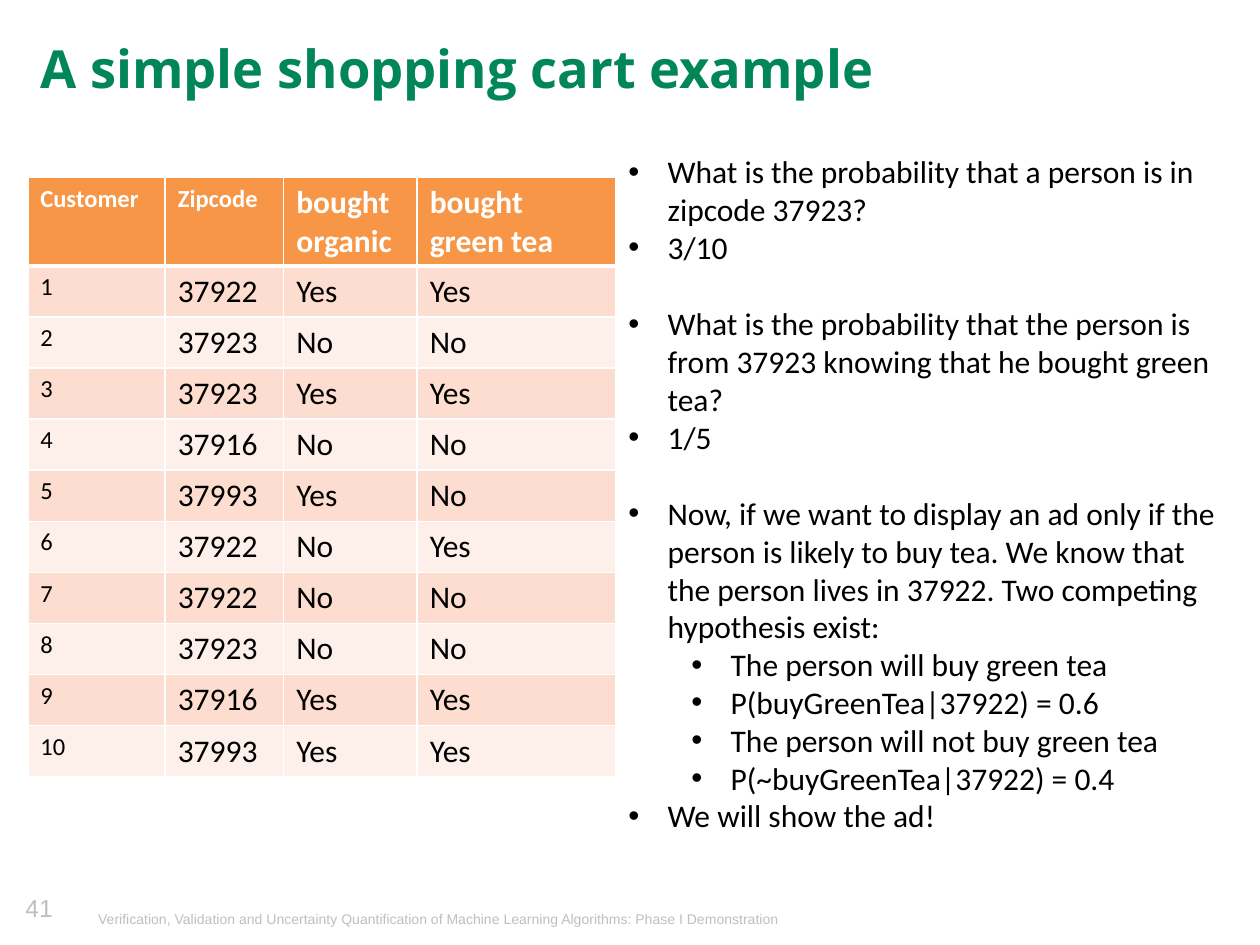
import pptx
import pptx.dml.color
import pptx.enum.text
import pptx.oxml.ns
import pptx.util
from lxml import etree

Cm = pptx.util.Cm
Pt = pptx.util.Pt
RGBColor = pptx.dml.color.RGBColor
Align = pptx.enum.text.PP_ALIGN
Anchor = pptx.enum.text.MSO_ANCHOR
qn = pptx.oxml.ns.qn

GREEN = RGBColor(0x00, 0x86, 0x57)
ORANGE = RGBColor(0xF7, 0x96, 0x46)
PEACH = RGBColor(0xFC, 0xDD, 0xCF)
PALE_PEACH = RGBColor(0xFD, 0xEF, 0xE9)
WHITE = RGBColor(0xFF, 0xFF, 0xFF)
BLACK = RGBColor(0x00, 0x00, 0x00)
GRAY = RGBColor(0xBF, 0xBF, 0xBF)

TITLE = "A simple shopping cart example"
PAGE = "41"
FOOTER = ("Verification, Validation and Uncertainty Quantification of "
          "Machine Learning Algorithms: Phase I Demonstration")
HEADINGS = ("Customer", "Zipcode", "bought organic", "bought green tea")
PURCHASES = [
    ("37922", "Yes", "Yes"),
    ("37923", "No", "No"),
    ("37923", "Yes", "Yes"),
    ("37916", "No", "No"),
    ("37993", "Yes", "No"),
    ("37922", "No", "Yes"),
    ("37922", "No", "No"),
    ("37923", "No", "No"),
    ("37916", "Yes", "Yes"),
    ("37993", "Yes", "Yes"),
]
QUESTIONS = [
    (0, 0, "What is the probability that a person is in zipcode 37923?"),
    (0, 0, "3/10"),
    (0, 22, "What is the probability that the person is from 37923 "
            "knowing that he bought green tea?"),
    (0, 0, "1/5"),
    (0, 22, "Now, if we want to display an ad only if the person is likely "
            "to buy tea. We know that the person lives in 37922. "
            "Two competing hypothesis exist:"),
    (1, 0, "The person will buy green tea"),
    (1, 0, "P(buyGreenTea|37922) = 0.6"),
    (1, 0, "The person will not buy green tea"),
    (1, 0, "P(~buyGreenTea|37922) = 0.4"),
    (0, 0, "We will show the ad!"),
]

COLUMN_WIDTHS = (Cm(2.77), Cm(2.39), Cm(2.69), Cm(4.01))
HEADING_HEIGHT = Cm(1.76)
ROW_HEIGHT = Cm(1.03)
HANGING = Cm(0.79)
LEVEL_STEP = Cm(1.27)


def write(frame, text, size=18, font="Calibri", color=BLACK, bold=False,
          align=Align.LEFT, spacing=None, before=0, bullet_level=None):
    paragraph = frame.paragraphs[0] if not frame.text else frame.add_paragraph()
    if bullet_level is not None:
        properties = paragraph._p.get_or_add_pPr()
        properties.set("marL", str(HANGING + bullet_level * LEVEL_STEP))
        properties.set("indent", str(-HANGING))
        etree.SubElement(properties, qn("a:buFont")).set("typeface", "Arial")
        etree.SubElement(properties, qn("a:buChar")).set("char", "•")
        paragraph.level = bullet_level
    paragraph.alignment = align
    if spacing:
        paragraph.line_spacing = spacing
    if before:
        paragraph.space_before = Pt(before)
    run = paragraph.add_run()
    run.text = text
    run.font.size = Pt(size)
    run.font.name = font
    run.font.bold = bold
    run.font.color.rgb = color


def add_frame(slide, left, top, width, height):
    frame = slide.shapes.add_textbox(left, top, width, height).text_frame
    frame.word_wrap = True
    return frame


def set_borders(cell, bottom_width):
    properties = cell._tc.get_or_add_tcPr()
    widths = {"lnL": 1, "lnR": 1, "lnT": 1, "lnB": bottom_width}
    for position, (side, width) in enumerate(widths.items()):
        line = etree.Element(qn(f"a:{side}"), w=str(Pt(width)))
        fill = etree.SubElement(line, qn("a:solidFill"))
        etree.SubElement(fill, qn("a:srgbClr")).set("val", str(WHITE))
        properties.insert(position, line)


def add_purchases(slide):
    rows = [HEADINGS] + [(str(number), *purchase)
                         for number, purchase in enumerate(PURCHASES, 1)]
    table = slide.shapes.add_table(
        len(rows), len(HEADINGS), Cm(0.56), Cm(3.58), sum(COLUMN_WIDTHS),
        HEADING_HEIGHT + ROW_HEIGHT * len(PURCHASES)).table
    for column, width in zip(table.columns, COLUMN_WIDTHS):
        column.width = width
    for row, values in enumerate(rows):
        heading = row == 0
        table.rows[row].height = HEADING_HEIGHT if heading else ROW_HEIGHT
        for column, value in enumerate(values):
            cell = table.cell(row, column)
            small = column == 0 or (heading and column == 1)
            write(cell.text_frame, value, size=14 if small else 18,
                  bold=heading, color=WHITE if heading else BLACK)
            cell.fill.solid()
            cell.fill.fore_color.rgb = (
                ORANGE if heading else PEACH if row % 2 else PALE_PEACH)
            set_borders(cell, 3 if heading else 1)


def main():
    deck = pptx.Presentation()
    deck.slide_width, deck.slide_height = Cm(25.4), Cm(19.05)
    slide = deck.slides.add_slide(deck.slide_layouts[5])

    title = slide.shapes.title
    title.left, title.top = Cm(0.56), Cm(0.48)
    title.width, title.height = Cm(22.86), Cm(1.65)
    title.text_frame.auto_size = pptx.enum.text.MSO_AUTO_SIZE.NONE
    title.text_frame.vertical_anchor = Anchor.MIDDLE
    write(title.text_frame, TITLE, size=30, font="Open Sans", color=GREEN,
          bold=True, spacing=1.1)

    page = add_frame(slide, Cm(0.36), Cm(18.06), Cm(0.86), Cm(0.84))
    page.margin_left = page.margin_right = 0
    page.margin_top = page.margin_bottom = 0
    write(page, PAGE, size=14, font="Arial", color=GRAY, align=Align.CENTER,
          spacing=0.9)

    footer = add_frame(slide, Cm(1.73), Cm(18.24), Cm(15.6), Cm(0.51))
    write(footer, FOOTER, size=8, font="Arial", color=GRAY)

    add_purchases(slide)

    questions = add_frame(slide, Cm(12.42), Cm(2.95), Cm(12.42), Cm(14.1))
    for level, before, text in QUESTIONS:
        write(questions, text, bullet_level=level, before=before)

    deck.save("out.pptx")


if __name__ == "__main__":
    main()
